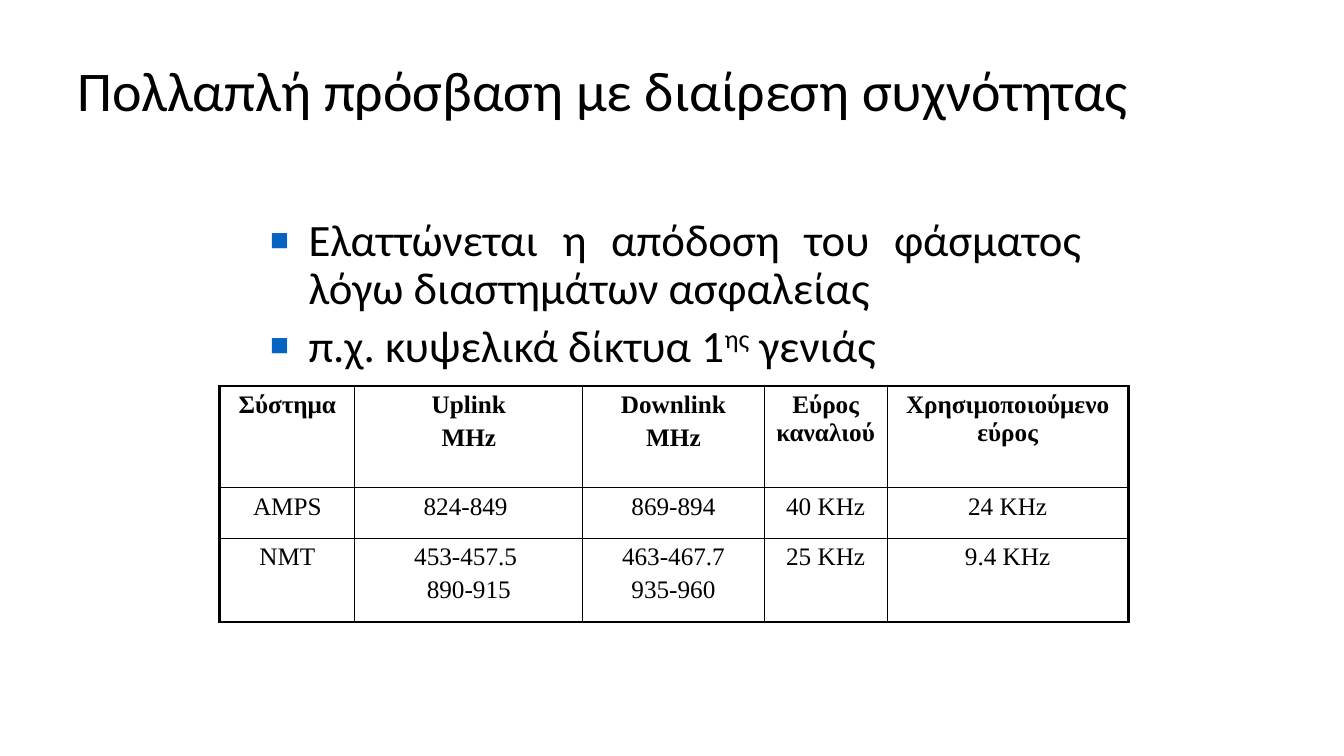
from lxml.etree import SubElement
from pptx import Presentation
from pptx.dml.color import RGBColor
from pptx.enum.text import MSO_ANCHOR, MSO_AUTO_SIZE, PP_ALIGN
from pptx.oxml.ns import qn
from pptx.util import Inches, Pt

BLACK = "000000"
BULLET_BLUE = "0563C1"
TITLE = "Πολλαπλή πρόσβαση με διαίρεση συχνότητας"
BULLETS = [
    [("Ελαττώνεται η απόδοση του φάσματος λόγω διαστημάτων ασφαλείας", False)],
    [("π.χ. κυψελικά δίκτυα 1", False), ("ης", True), (" γενιάς", False)],
]
COLUMN_WIDTHS = [1.34, 2.26, 1.8, 1.22, 2.39]
ROW_HEIGHTS = [1.01, 0.5, 0.83]
SYSTEMS = [
    ["Σύστημα", "Uplink\nMHz", "Downlink\nMHz", "Εύρος καναλιού", "Χρησιμοποιούμενο εύρος"],
    ["AMPS", "824-849 ", "869-894", "40 KHz", "24 KHz"],
    ["NMT", "453-457.5 \n890-915", "463-467.7\n935-960", "25 KHz", "9.4 KHz"],
]


def color(value):
    """Turn a hex string into a colour."""
    return RGBColor.from_string(value)


def add_span(para, text, font, size, bold=False):
    """Add a formatted run to a paragraph and return it."""
    span = para.add_run()
    span.text = text
    span.font.name = font
    span.font.size = Pt(size)
    span.font.bold = bold
    span.font.color.rgb = color(BLACK)
    return span


def place(shape, left, top, width, height, anchor):
    """Move a placeholder and fix its anchor and text size."""
    shape.left, shape.top = Inches(left), Inches(top)
    shape.width, shape.height = Inches(width), Inches(height)
    shape.text_frame.auto_size = MSO_AUTO_SIZE.NONE
    shape.text_frame.vertical_anchor = anchor


def set_bullet(para):
    """Give a paragraph a small blue square with a hanging indent."""
    props = para._p.get_or_add_pPr()
    props.set("marL", str(Inches(0.38)))
    props.set("indent", str(-Inches(0.38)))
    fill = SubElement(props, qn("a:buClr"))
    SubElement(fill, qn("a:srgbClr"), val=BULLET_BLUE)
    SubElement(props, qn("a:buSzPct"), val="70000")
    SubElement(props, qn("a:buChar"), char="■")


def fill_title(box):
    """Write the slide title."""
    place(box, 0.67, 0.3, 12, 1.25, MSO_ANCHOR.MIDDLE)
    para = box.text_frame.paragraphs[0]
    para.alignment = PP_ALIGN.LEFT
    para.line_spacing = 0.9
    add_span(para, TITLE, "Calibri", 40)


def fill_bullets(box):
    """Write the justified bullet list."""
    place(box, 2.58, 2.11, 8.25, 1.31, MSO_ANCHOR.TOP)
    frame = box.text_frame
    for index, parts in enumerate(BULLETS):
        para = frame.add_paragraph() if index else frame.paragraphs[0]
        para.alignment = PP_ALIGN.JUSTIFY
        para.line_spacing = 0.9
        para.space_before = Pt(6.4)
        set_bullet(para)
        for text, raised in parts:
            span = add_span(para, text, "Calibri", 32)
            if raised:
                span.font._element.set("baseline", "30000")


def set_borders(cell, outer_sides):
    """Draw black cell borders, thicker on the table's outer sides."""
    props = cell._tc.get_or_add_tcPr()
    for side in "LRTB":
        width = Pt(2.25 if side in outer_sides else 1)
        line = SubElement(props, qn(f"a:ln{side}"), w=str(width))
        fill = SubElement(line, qn("a:solidFill"))
        SubElement(fill, qn("a:srgbClr"), val=BLACK)


def fill_cell(cell, text, bold):
    """Write centred paragraphs into a cell."""
    for index, line in enumerate(text.split("\n")):
        para = cell.text_frame.add_paragraph() if index else cell.text_frame.paragraphs[0]
        para.alignment = PP_ALIGN.CENTER
        para.space_before = Pt(3.6)
        add_span(para, line, "Times New Roman", 18, bold)


def add_systems_table(page):
    """Add the table of cellular systems."""
    rows, columns = len(ROW_HEIGHTS), len(COLUMN_WIDTHS)
    table = page.shapes.add_table(
        rows, columns, Inches(2.18), Inches(3.83),
        Inches(sum(COLUMN_WIDTHS)), Inches(sum(ROW_HEIGHTS))).table
    table.first_row = table.horz_banding = False
    for column, width in zip(table.columns, COLUMN_WIDTHS):
        column.width = Inches(width)
    for r, height in enumerate(ROW_HEIGHTS):
        table.rows[r].height = Inches(height)
        for c, text in enumerate(SYSTEMS[r]):
            cell = table.cell(r, c)
            edges = {"L": c == 0, "R": c == columns - 1, "T": r == 0, "B": r == rows - 1}
            set_borders(cell, [side for side, outer in edges.items() if outer])
            cell.fill.background()
            fill_cell(cell, text, bold=r == 0)


def main():
    """Build and save the slide."""
    deck = Presentation()
    deck.slide_width, deck.slide_height = Inches(13.33), Inches(7.5)
    page = deck.slides.add_slide(deck.slide_layouts[1])
    fill_title(page.shapes.title)
    fill_bullets(page.placeholders[1])
    add_systems_table(page)
    deck.save("out.pptx")


if __name__ == "__main__":
    main()
